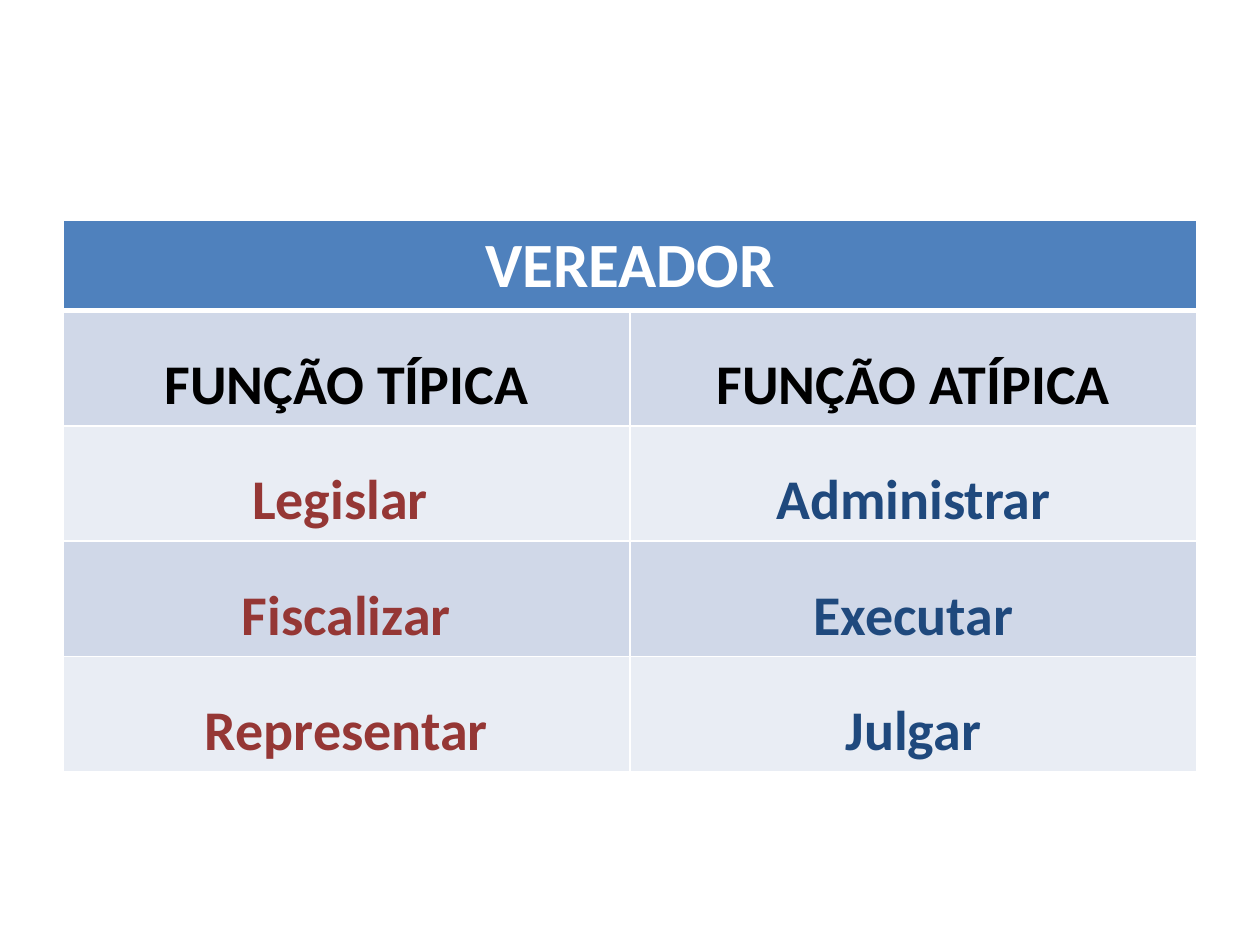
import lxml.etree
import pptx
import pptx.dml.color
import pptx.enum.text
import pptx.oxml.ns
import pptx.util

Cm = pptx.util.Cm
Pt = pptx.util.Pt
RGBColor = pptx.dml.color.RGBColor
qn = pptx.oxml.ns.qn

WHITE = RGBColor(0xFF, 0xFF, 0xFF)
BLACK = RGBColor(0x00, 0x00, 0x00)
HEADER_BLUE = RGBColor(0x4F, 0x81, 0xBD)
BAND_DARK = RGBColor(0xD0, 0xD8, 0xE8)
BAND_LIGHT = RGBColor(0xE9, 0xED, 0xF4)
TYPICAL_RED = RGBColor(0x95, 0x37, 0x35)
ATYPICAL_BLUE = RGBColor(0x1F, 0x49, 0x7D)


def write_cell(cell, text, *, color, fill, size=32, spacing=1.5, top=1, bottom=1):
    properties = cell._tc.get_or_add_tcPr()
    for side, width in (("lnL", 1), ("lnR", 1), ("lnT", top), ("lnB", bottom)):
        border = lxml.etree.SubElement(properties, qn(f"a:{side}"), w=str(Pt(width)))
        line_fill = lxml.etree.SubElement(border, qn("a:solidFill"))
        lxml.etree.SubElement(line_fill, qn("a:srgbClr"), val=str(WHITE))
    cell.fill.solid()
    cell.fill.fore_color.rgb = fill
    paragraph = cell.text_frame.paragraphs[0]
    paragraph.alignment = pptx.enum.text.PP_ALIGN.CENTER
    paragraph.line_spacing = spacing
    run = paragraph.add_run()
    run.text = text
    run.font.name = "Calibri"
    run.font.size = Pt(size)
    run.font.bold = True
    run.font.color.rgb = color


presentation = pptx.Presentation()
presentation.slide_width = Cm(25.4)
presentation.slide_height = Cm(19.05)
slide = presentation.slides.add_slide(presentation.slide_layouts[6])

functions = [
    ("FUNÇÃO TÍPICA", "FUNÇÃO ATÍPICA"),
    ("Legislar ", "Administrar"),
    ("Fiscalizar", "Executar"),
    ("Representar", "Julgar"),
]
header_height = Cm(1.8)
function_height = Cm(2.32)

councillor = slide.shapes.add_table(
    len(functions) + 1, 2, Cm(1.27), Cm(4.45), Cm(22.86),
    header_height + len(functions) * function_height,
).table
councillor.rows[0].height = header_height
councillor.cell(0, 0).merge(councillor.cell(0, 1))
write_cell(councillor.cell(0, 0), "VEREADOR", color=WHITE, fill=HEADER_BLUE,
           size=36, spacing=1.0, bottom=3)

for row, names in enumerate(functions, start=1):
    councillor.rows[row].height = function_height
    colors = (BLACK, BLACK) if row == 1 else (TYPICAL_RED, ATYPICAL_BLUE)
    for column, (name, color) in enumerate(zip(names, colors)):
        write_cell(councillor.cell(row, column), name, color=color,
                   fill=BAND_DARK if row % 2 else BAND_LIGHT,
                   top=3 if row == 1 else 1)

presentation.save("out.pptx")
